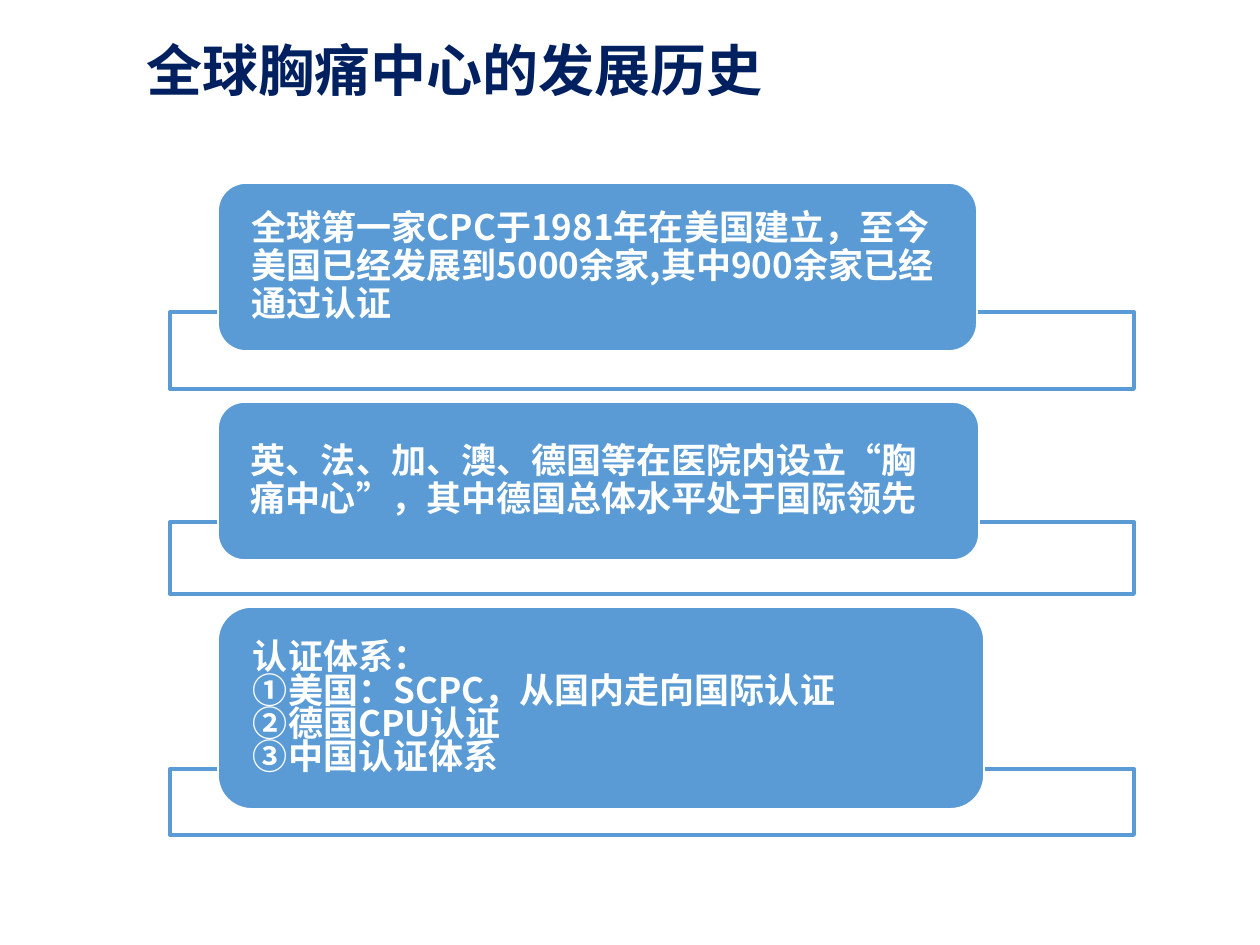
from lxml import etree
from pptx import Presentation
from pptx import util as u
from pptx.dml.color import RGBColor
from pptx.enum import shapes, text
from pptx.oxml.ns import qn

PX = 914400 / 126
NAVY = RGBColor(0x00, 0x20, 0x60)
BLUE = RGBColor(0x5B, 0x9B, 0xD5)
WHITE = RGBColor(0xFF, 0xFF, 0xFF)

FRAME_LEFT, FRAME_WIDTH = 170, 964
CARD_LEFT = 218

# card top, card width, card height, frame top, frame height, lines
STAGES = [
    (183, 759, 168, 312, 77,
     ["全球第一家CPC于1981年在美国建立，至今美国已经发展到5000余家,其中900余家已经通过认证"]),
    (402, 761, 158, 522, 72,
     ["英、法、加、澳、德国等在医院内设立“胸痛中心”，其中德国总体水平处于国际领先"]),
    (607, 766, 202, 769, 66,
     ["认证体系：", "①美国：SCPC，从国内走向国际认证", "②德国CPU认证", "③中国认证体系"]),
]


def px(*lengths):
    return [u.Emu(round(length * PX)) for length in lengths]


def apply(target, values):
    for name, value in values.items():
        setattr(target, name, value)


class Deck:
    font = "Noto Sans CJK SC"

    def __init__(self, width, height):
        self.presentation = Presentation()
        apply(self.presentation, dict(zip(("slide_width", "slide_height"), px(width, height))))
        self.slide = self.presentation.slides.add_slide(self.presentation.slide_layouts[5])

    def add_words(self, paragraph, words, size, color):
        run = paragraph.add_run()
        run.text = words
        apply(run.font, {"name": self.font, "size": u.Pt(size), "bold": True})
        run.font.color.rgb = color
        latin = run.font._element.find(qn("a:latin"))
        east_asian = etree.Element(qn("a:ea"), typeface=self.font)
        latin.addnext(east_asian)

    def title(self, words, *box):
        heading = self.slide.shapes.title
        apply(heading, dict(zip(("left", "top", "width", "height"), px(*box))))
        frame = heading.text_frame
        apply(frame, {"auto_size": text.MSO_AUTO_SIZE.NONE, "word_wrap": True,
                      "vertical_anchor": text.MSO_ANCHOR.MIDDLE})
        frame.paragraphs[0].alignment = text.PP_ALIGN.LEFT
        self.add_words(frame.paragraphs[0], words, 32, NAVY)

    def block(self, kind, box, fill, line, line_width):
        block = self.slide.shapes.add_shape(kind, *px(*box))
        block.shadow.inherit = False
        block.fill.solid()
        block.fill.fore_color.rgb = fill
        block.line.color.rgb = line
        block.line.width = u.Pt(line_width)
        return block

    def frame(self, *box):
        """Outlined box behind a card, filled with white at 90% opacity."""
        frame = self.block(shapes.MSO_SHAPE.RECTANGLE, box, WHITE, BLUE, 2.25)
        color = frame._element.spPr.find(qn("a:solidFill"))[0]
        etree.SubElement(color, qn("a:alpha"), val="90000")

    def card(self, lines, *box):
        """Rounded card; lines after the first have a fixed 12 pt pitch."""
        card = self.block(shapes.MSO_SHAPE.ROUNDED_RECTANGLE, box, BLUE, WHITE, 1)
        side = u.Inches(0.2)
        body = card.text_frame
        apply(body, {"margin_left": side, "margin_right": side, "margin_top": 0,
                     "margin_bottom": 0, "word_wrap": True,
                     "vertical_anchor": text.MSO_ANCHOR.MIDDLE})
        for index, line in enumerate(lines):
            paragraph = body.add_paragraph() if index else body.paragraphs[0]
            apply(paragraph, {"alignment": text.PP_ALIGN.LEFT, "space_after": u.Pt(7),
                              "line_spacing": u.Pt(12) if index else 0.9})
            self.add_words(paragraph, line, 20, WHITE)


def main():
    deck = Deck(1260, 945)
    deck.title("全球胸痛中心的发展历史", 134, 1, 1126, 137)
    for card_top, card_width, card_height, frame_top, frame_height, lines in STAGES:
        deck.frame(FRAME_LEFT, frame_top, FRAME_WIDTH, frame_height)
        deck.card(lines, CARD_LEFT, card_top, card_width, card_height)
    deck.presentation.save("out.pptx")


if __name__ == "__main__":
    main()
